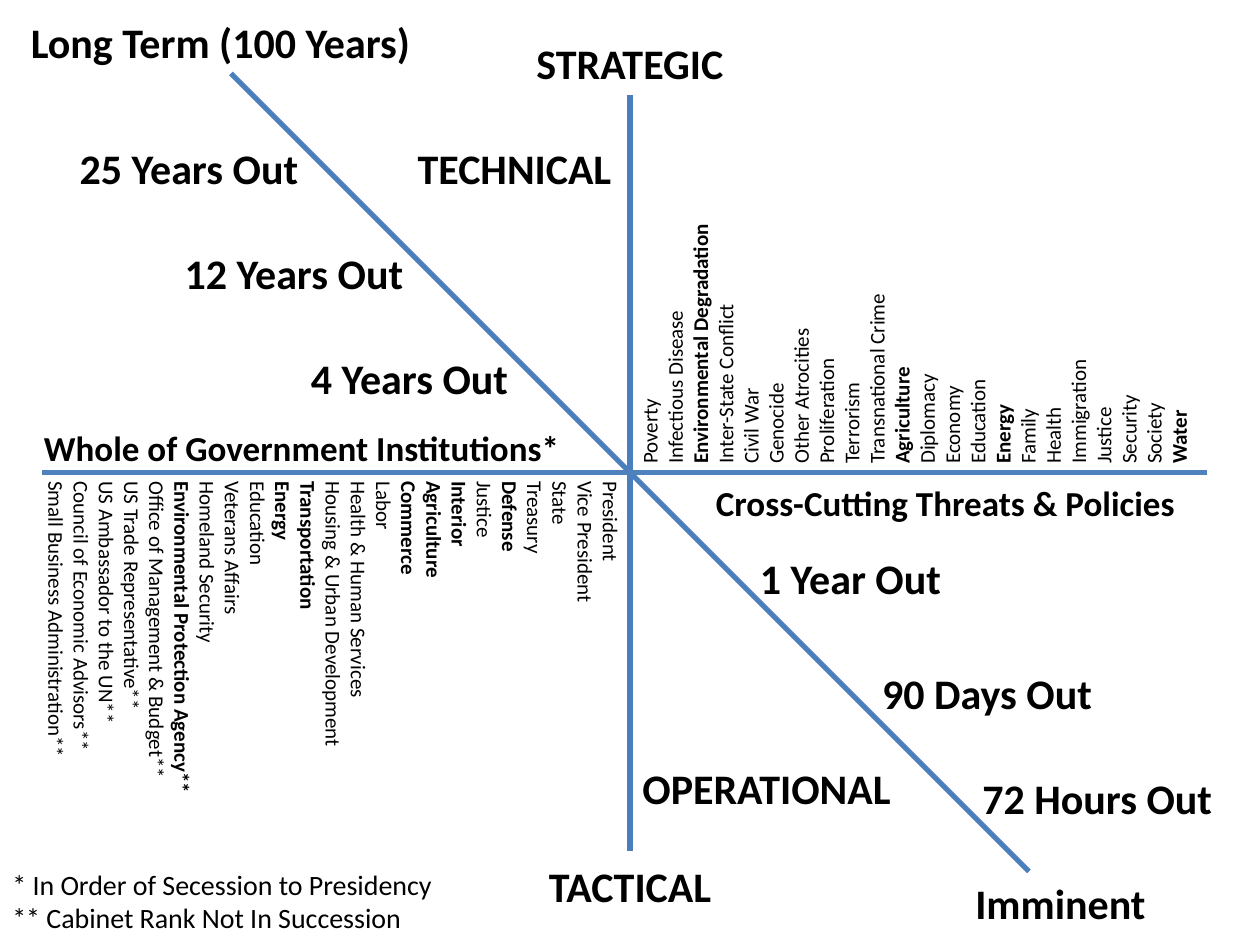
from lxml.etree import SubElement
from pptx import Presentation
from pptx.dml.color import RGBColor
from pptx.enum.shapes import MSO_CONNECTOR as Connector
from pptx.enum.text import MSO_AUTO_SIZE as AutoSize, PP_ALIGN as Align
from pptx.oxml.ns import qn
from pptx.util import Inches, Pt

UNITS_PER_INCH = 12
FONT = "Calibri"
TEXT_COLOUR = "000000"

HEADINGS = [
    ("STRATEGIC", 48, 3, 24),
    ("TECHNICAL", 37, 13, 24),
    ("Long Term (100 Years)", 1, 1, 40),
    ("Imminent", 89, 83, 24),
    ("1 Year Out", 71, 52, 20),
    ("90 Days Out", 82, 63, 24),
    ("72 Hours Out", 91, 73, 27),
    ("4 Years Out", 27, 33, 24),
    ("25 Years Out", 6, 13, 24),
    ("12 Years Out", 16, 23, 24),
    ("OPERATIONAL", 59, 72, 28),
    ("TACTICAL", 50, 81.4, 20),
]

AXIS_TITLES = [
    ("Whole of Government Institutions*", 3, 40, 52),
    ("Cross-Cutting Threats & Policies", 67, 45.25, 46.5),
]

AXES = [
    ((60, 9), (60, 81), "4B7EBC"),
    ((22, 7), (98, 83), "4B7EBC"),
    ((4, 45), (115, 45), "4F81BD"),
]

FOOTNOTES = [
    "* In Order of Secession to Presidency",
    "** Cabinet Rank Not In Succession",
]

THREATS = [
    "Poverty", "Infectious Disease", "Environmental Degradation",
    "Inter-State Conflict", "Civil War", "Genocide", "Other Atrocities",
    "Proliferation", "Terrorism", "Transnational Crime", "Agriculture",
    "Diplomacy", "Economy", "Education", "Energy", "Family", "Health",
    "Immigration", "Justice", "Security", "Society", "Water",
]
BOLD_THREATS = {"Environmental Degradation", "Agriculture", "Energy", "Water"}

INSTITUTIONS = [
    "President", "Vice President", "State", "Treasury", "Defense", "Justice",
    "Interior", "Agriculture", "Commerce", "Labor", "Health & Human Services",
    "Housing & Urban Development", "Transportation", "Energy", "Education",
    "Veterans Affairs", "Homeland Security",
    "Environmental Protection Agency**", "Office of Management & Budget**",
    "US Trade Representative**", "US Ambassador to the UN**",
    "Council of Economic Advisors**", "Small Business Administration**",
]
BOLD_INSTITUTIONS = {
    "Defense", "Interior", "Agriculture", "Commerce", "Transportation",
    "Energy", "Environmental Protection Agency**",
}


def grid(units):
    return Inches(units / UNITS_PER_INCH)


def colour(hex_string):
    return RGBColor.from_string(hex_string)


def add_text(slide, lines, box, size, bold_lines=(), align=Align.LEFT,
             wrap=True, rotation=0):
    shape = slide.shapes.add_textbox(*map(grid, box))
    shape.rotation = rotation
    frame = shape.text_frame
    frame.word_wrap = wrap
    frame.auto_size = AutoSize.SHAPE_TO_FIT_TEXT
    for index, line in enumerate(lines):
        paragraph = frame.add_paragraph() if index else frame.paragraphs[0]
        paragraph.alignment = align
        run = paragraph.add_run()
        run.text = line
        run.font.name = FONT
        run.font.size = Pt(size)
        run.font.bold = line in bold_lines
        run.font.color.rgb = colour(TEXT_COLOUR)


def add_axis(slide, start, end, hex_string):
    ends = map(grid, start + end)
    axis = slide.shapes.add_connector(Connector.STRAIGHT, *ends)
    axis.line.color.rgb = colour(hex_string)
    axis.line.width = Pt(3)
    SubElement(axis._element.spPr, qn("a:effectLst"))


def main():
    presentation = Presentation()
    presentation.slide_width = Inches(10)
    presentation.slide_height = Inches(7.5)
    slide = presentation.slides.add_slide(presentation.slide_layouts[6])

    for start, end, hex_string in AXES:
        add_axis(slide, start, end, hex_string)
    for text, left, top, width in HEADINGS:
        add_text(slide, [text], (left, top, width, 6), 24, {text},
                 align=Align.CENTER)
    for text, left, top, width in AXIS_TITLES:
        add_text(slide, [text], (left, top, width, 5.25), 20, {text},
                 wrap=False)
    add_text(slide, FOOTNOTES, (0, 82, 52.3, 7.7), 16)
    add_text(slide, THREATS, (74.5, 5.3, 25.6, 54.5), 12, BOLD_THREATS,
             wrap=False, rotation=270)
    add_text(slide, INSTITUTIONS, (15.25, 32.4, 32.5, 57), 12,
             BOLD_INSTITUTIONS, wrap=False, rotation=90)

    presentation.save("out.pptx")


if __name__ == "__main__":
    main()
